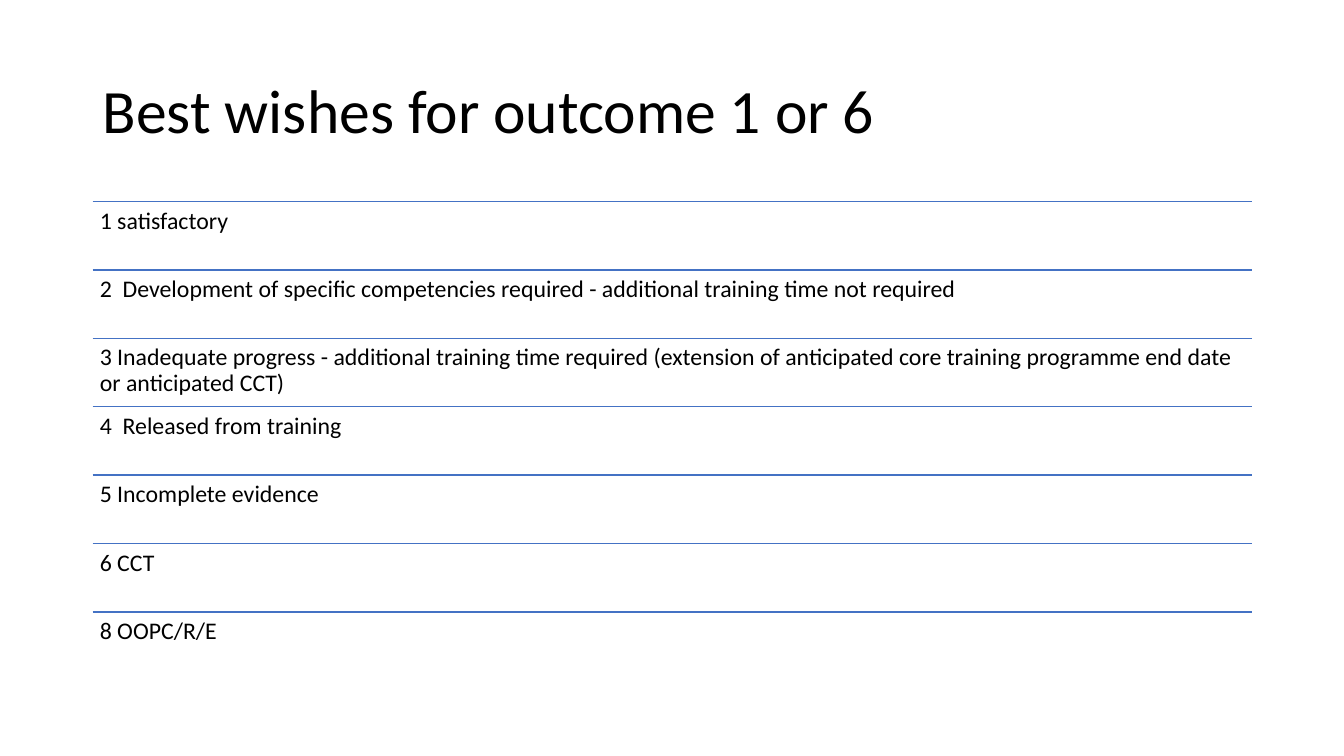
import pptx
import pptx.util
import pptx.dml.color
import pptx.enum.shapes
import pptx.enum.text
import pptx.oxml.ns
import lxml.etree

SCALE = 9144
BLACK = pptx.dml.color.RGBColor(0x00, 0x00, 0x00)
BLUE = pptx.dml.color.RGBColor(0x44, 0x72, 0xC4)
FONT = "Calibri"
ITEMS = [
    "1 satisfactory",
    "2  Development of specific competencies required - additional training time not required",
    "3 Inadequate progress - additional training time required (extension of anticipated core training programme end date or anticipated CCT)",
    "4  Released from training",
    "5 Incomplete evidence",
    "6 CCT",
    "8 OOPC/R/E",
]


def px(size):
    return pptx.util.Emu(round(size * SCALE))


def write(shape, text, size, anchor, inset, after=0):
    frame = shape.text_frame
    frame.word_wrap = True
    frame.auto_size = pptx.enum.text.MSO_AUTO_SIZE.NONE
    frame.vertical_anchor = anchor
    frame.margin_left = frame.margin_right = px(inset)
    frame.margin_top = frame.margin_bottom = px(min(inset, 7))
    para = frame.paragraphs[0]
    para.alignment = pptx.enum.text.PP_ALIGN.LEFT
    para.line_spacing = 0.9
    para.space_after = pptx.util.Pt(after)
    run = para.add_run()
    run.text = text
    run.font.name = FONT
    run.font.size = pptx.util.Pt(size)
    run.font.color.rgb = BLACK


def head(slide, text, left, top, width, height):
    title = slide.shapes.title
    title.left, title.top = px(left), px(top)
    title.width, title.height = px(width), px(height)
    write(title, text, 44, pptx.enum.text.MSO_ANCHOR.MIDDLE, 10)


def rule(shapes, left, top, width):
    line = shapes.add_connector(
        pptx.enum.shapes.MSO_CONNECTOR.STRAIGHT,
        px(left), px(top), px(left + width), px(top))
    line.line.color.rgb = BLUE
    line.line.width = pptx.util.Pt(1)
    lxml.etree.SubElement(
        line._element.spPr, pptx.oxml.ns.qn("a:effectLst"))


def rows(slide, items, left, top, width, height):
    shapes = slide.shapes.add_group_shape().shapes
    step = height / len(items)
    for index, item in enumerate(items):
        y = top + index * step
        rule(shapes, left, y, width)
        box = shapes.add_textbox(px(left), px(y), px(width), px(step))
        write(box, item, 17, pptx.enum.text.MSO_ANCHOR.TOP, 7, after=6)


def main():
    deck = pptx.Presentation()
    deck.slide_width, deck.slide_height = px(1333), px(750)
    slide = deck.slides.add_slide(deck.slide_layouts[5])
    head(slide, "Best wishes for outcome 1 or 6", 92, 40, 1150, 145)
    rows(slide, ITEMS, 92, 200, 1150, 475)
    deck.save("out.pptx")


if __name__ == "__main__":
    main()
